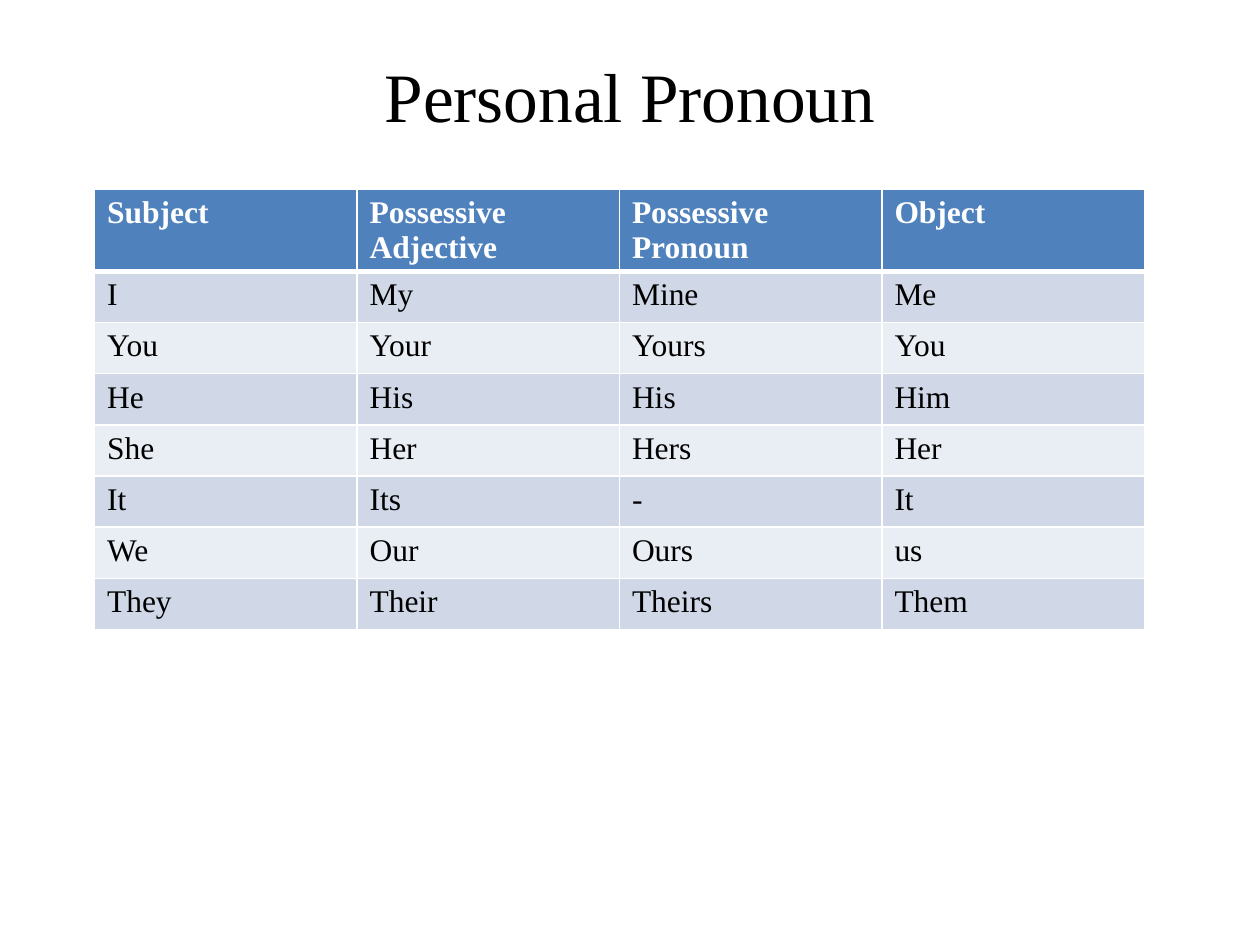
import pptx
import pptx.util
import pptx.dml.color
import pptx.enum.text
import pptx.oxml
import pptx.oxml.ns

RGBColor = pptx.dml.color.RGBColor
BLACK = RGBColor(0x00, 0x00, 0x00)
WHITE = RGBColor(0xFF, 0xFF, 0xFF)
BLUE = RGBColor(0x4F, 0x81, 0xBD)
BANDS = [RGBColor(0xE9, 0xED, 0xF4), RGBColor(0xD0, 0xD8, 0xE8)]

WIDE = pptx.util.Inches(10)
HIGH = pptx.util.Inches(7.5)
FONT = "Times New Roman"

ROWS = [
    ["Subject", "Possessive Adjective", "Possessive Pronoun", "Object"],
    ["I", "My", "Mine", "Me"],
    ["You", "Your", "Yours", "You"],
    ["He", "His", "His", "Him"],
    ["She", "Her", "Hers", "Her"],
    ["It", "Its", "-", "It"],
    ["We", "Our", "Ours", "us"],
    ["They", "Their", "Theirs", "Them"],
]


def share(x, y, w, h):
    return int(WIDE * x), int(HIGH * y), int(WIDE * w), int(HIGH * h)


def put_text(frame, text, size=18, color=BLACK, bold=False, align=None):
    para = frame.paragraphs[0]
    para.alignment = align
    run = para.add_run()
    run.text = text
    run.font.name = FONT
    run.font.size = pptx.util.Pt(size)
    run.font.bold = bold
    run.font.color.rgb = color


def add_title(slide, text, box):
    title = slide.shapes.title
    title.left, title.top, title.width, title.height = box
    frame = title.text_frame
    frame.auto_size = pptx.enum.text.MSO_AUTO_SIZE.NONE
    frame.vertical_anchor = pptx.enum.text.MSO_ANCHOR.MIDDLE
    put_text(frame, text, size=39.6, align=pptx.enum.text.PP_ALIGN.CENTER)


def add_edge(cell, side, width):
    props = cell._tc.get_or_add_tcPr()
    props.append(pptx.oxml.parse_xml(
        f'<a:ln{side} {pptx.oxml.ns.nsdecls("a")} w="{pptx.util.Pt(width)}">'
        f'<a:solidFill><a:srgbClr val="{WHITE}"/></a:solidFill></a:ln{side}>'
    ))


def style_cell(cell, row):
    thick = {0: "B", 1: "T"}.get(row)
    for side in "LRTB":
        add_edge(cell, side, 3 if side == thick else 1)
    cell.fill.solid()
    cell.fill.fore_color.rgb = BANDS[row % 2] if row else BLUE


def add_grid(slide, rows, box):
    table = slide.shapes.add_table(len(rows), len(rows[0]), *box).table
    for r, words in enumerate(rows):
        head = r == 0
        for c, word in enumerate(words):
            cell = table.cell(r, c)
            style_cell(cell, r)
            put_text(cell.text_frame, word, bold=head,
                     color=WHITE if head else BLACK)


def main():
    deck = pptx.Presentation()
    deck.slide_width, deck.slide_height = WIDE, HIGH
    slide = deck.slides.add_slide(deck.slide_layouts[5])
    add_title(slide, "Personal Pronoun", share(4 / 15, 1 / 18, 7 / 15, 0.09))
    add_grid(slide, ROWS, share(0.075, 0.2, 5 / 6, 13 / 30))
    deck.save("out.pptx")


if __name__ == "__main__":
    main()
